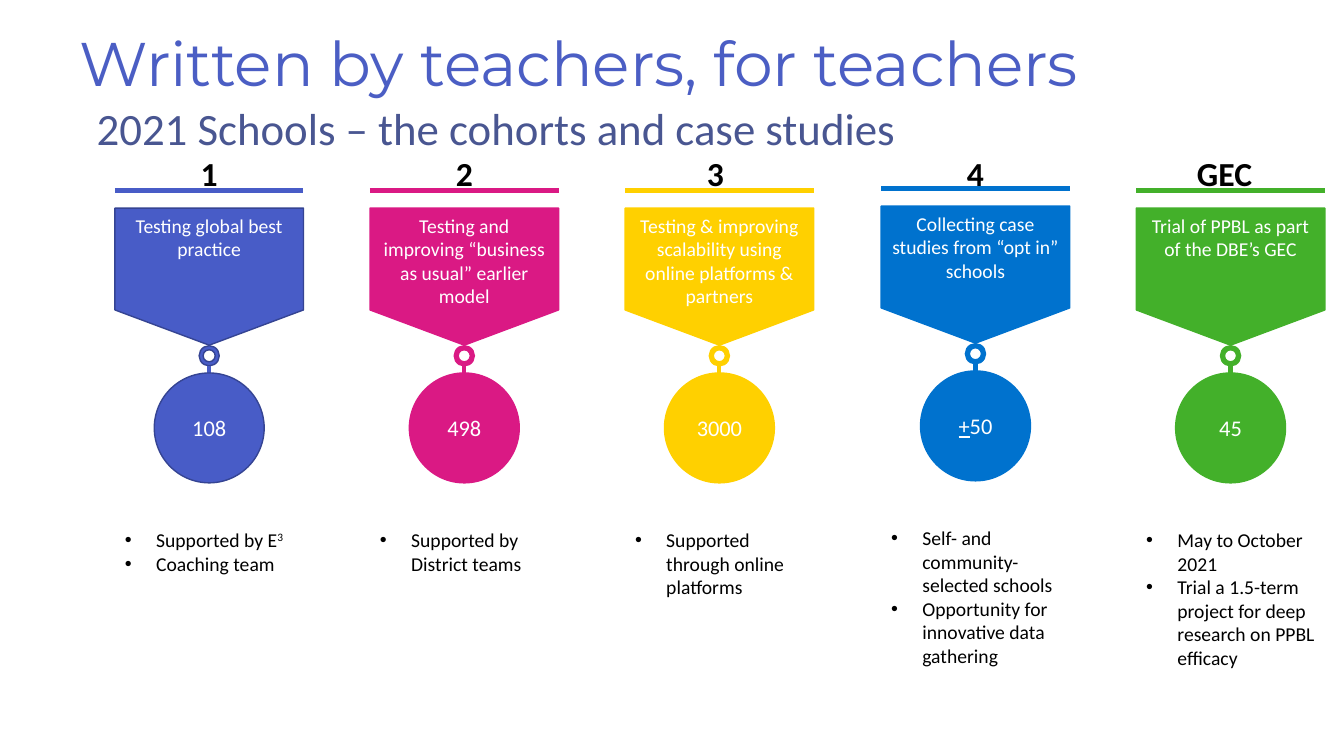
import dataclasses

import lxml.etree
import pptx
import pptx.dml.color
import pptx.enum.shapes
import pptx.enum.text
import pptx.oxml.ns
import pptx.util

RGBColor = pptx.dml.color.RGBColor
Shape = pptx.enum.shapes.MSO_SHAPE
Align = pptx.enum.text.PP_ALIGN
Anchor = pptx.enum.text.MSO_ANCHOR
AutoSize = pptx.enum.text.MSO_AUTO_SIZE

PX = 9144
WHITE = RGBColor(0xFF, 0xFF, 0xFF)
BLACK = RGBColor(0x00, 0x00, 0x00)
TITLE_BLUE = RGBColor(0x4B, 0x5E, 0xC4)
SUBTITLE_BLUE = RGBColor(0x49, 0x56, 0x91)
INDIGO = RGBColor(0x48, 0x5C, 0xC7)
DARK_INDIGO = RGBColor(0x35, 0x44, 0x93)
PINK = RGBColor(0xDA, 0x19, 0x84)
YELLOW = RGBColor(0xFF, 0xD0, 0x00)
BLUE = RGBColor(0x00, 0x72, 0xCE)
GREEN = RGBColor(0x43, 0xB0, 0x2A)

COLUMN_WIDTH = 187
FIRST_LEFT, LAST_LEFT = 114, 1127
COLUMN_TOP = 147


@dataclasses.dataclass
class Cohort:
    label: str
    heading: str
    heading_height: int
    schools: list
    details: list
    details_height: int
    color: RGBColor
    outline: RGBColor
    label_shift: int = 0
    lift: int = 0


COHORTS = [
    Cohort("1", "Testing global best practice", 57, ["108"],
           [["Supported by E", ("3", "superscript")], ["Coaching team"]], 57,
           INDIGO, DARK_INDIGO),
    Cohort("2", "Testing and improving “business as usual” earlier model", 128, ["498"],
           [["Supported by District teams"]], 57, PINK, PINK),
    Cohort("3", "Testing & improving scalability using online platforms & partners", 128,
           ["3000"], [["Supported through online platforms"]], 81, YELLOW, YELLOW,
           label_shift=-4),
    Cohort("4", "Collecting case studies from “opt in” schools", 81,
           [("+", "underline"), "50"],
           [["Self- and community-selected schools"],
            ["Opportunity for innovative data gathering"]], 199, BLUE, BLUE, lift=2),
    Cohort("GEC", "Trial of PPBL as part of the DBE’s GEC", 81, ["45"],
           [["May to October 2021"],
            ["Trial a 1.5-term project for deep research on PPBL efficacy"]], 175,
           GREEN, GREEN, label_shift=-6),
]


def px(*lengths):
    return [round(length * PX) for length in lengths]


def add_bullet(paragraph):
    properties = paragraph._p.get_or_add_pPr()
    properties.set("marL", str(31 * PX))
    properties.set("indent", str(-31 * PX))
    font = lxml.etree.SubElement(properties, pptx.oxml.ns.qn("a:buFont"))
    font.set("typeface", "Arial")
    bullet = lxml.etree.SubElement(properties, pptx.oxml.ns.qn("a:buChar"))
    bullet.set("char", "•")


def write_text(shape, paragraphs, size, color, font="Calibri", bold=False, align=Align.LEFT,
               anchor=Anchor.TOP, spacing=None, bullets=False):
    frame = shape.text_frame
    frame.word_wrap = True
    frame.auto_size = AutoSize.NONE
    frame.vertical_anchor = anchor
    for index, pieces in enumerate(paragraphs):
        paragraph = frame.paragraphs[0] if index == 0 else frame.add_paragraph()
        paragraph.alignment = align
        if spacing:
            paragraph.line_spacing = spacing
        if bullets:
            add_bullet(paragraph)
        for piece in pieces:
            text, style = (piece, None) if isinstance(piece, str) else piece
            run = paragraph.add_run()
            run.text = text
            run.font.name = font
            run.font.size = pptx.util.Pt(size)
            run.font.bold = bold
            run.font.color.rgb = color
            if style == "underline":
                run.font.underline = True
            if style == "superscript":
                run._r.get_or_add_rPr().set("baseline", "30000")


def add_filled(shapes, kind, box, cohort):
    shape = shapes.add_shape(kind, *px(*box))
    shape.shadow.inherit = False
    shape.fill.solid()
    shape.fill.fore_color.rgb = cohort.color
    shape.line.color.rgb = cohort.outline
    shape.line.width = pptx.util.Pt(1)
    return shape


def add_line(shapes, start, end, color):
    line = shapes.add_connector(pptx.enum.shapes.MSO_CONNECTOR.STRAIGHT, *px(*start, *end))
    line.line.color.rgb = color
    line.line.width = pptx.util.Pt(3)
    lxml.etree.SubElement(line._element.spPr, pptx.oxml.ns.qn("a:effectLst"))


def add_cohort(slide, cohort, left, top, width):
    shapes = slide.shapes.add_group_shape().shapes
    center = left + width / 2
    y = top - cohort.lift

    banner_depth = 136
    banner = add_filled(shapes, Shape.PENTAGON,
                        (center - banner_depth / 2, y + 34, banner_depth, width), cohort)
    banner.rotation = 90
    banner.adjustments[0] = 0.257
    add_line(shapes, (left, y + 42), (left + width, y + 42), cohort.color)
    ring = add_filled(shapes, Shape.DONUT, (center - 10, y + 196, 20, 20), cohort)
    ring.adjustments[0] = 0.2
    add_line(shapes, (center, y + 216), (center, y + 278), cohort.color)
    circle = add_filled(shapes, Shape.OVAL, (center - 54.5, y + 223, 109, 109), cohort)
    write_text(circle, [cohort.schools], 16, WHITE, align=Align.CENTER, anchor=Anchor.MIDDLE)

    heading = shapes.add_textbox(*px(left, y + 60, width, cohort.heading_height))
    write_text(heading, [[cohort.heading]], 14, WHITE, align=Align.CENTER)
    details = shapes.add_textbox(*px(left, y + 372, width, cohort.details_height))
    write_text(details, cohort.details, 14, BLACK, bullets=True)
    label_width = 114 if len(cohort.label) > 1 else 51
    label_left = center + cohort.label_shift - label_width / 2
    label = shapes.add_textbox(*px(label_left, top, label_width, 50))
    write_text(label, [[cohort.label]], 24, BLACK, bold=True, align=Align.CENTER)


def add_header(slide, left, top, width):
    title = slide.shapes.title
    title.left, title.top, title.width, title.height = px(left, top, width, 123)
    write_text(title, [["Written by teachers, for teachers"]], 44, TITLE_BLUE,
               font="Montserrat", anchor=Anchor.MIDDLE, spacing=0.9)
    subtitle = slide.shapes.add_textbox(*px(left + 17, top + 96, 1228, 75))
    write_text(subtitle, [["2021 Schools – the cohorts and case studies"]], 32,
               SUBTITLE_BLUE, spacing=0.9)


def main():
    presentation = pptx.Presentation()
    presentation.slide_width, presentation.slide_height = px(1333, 750)
    slide = presentation.slides.add_slide(presentation.slide_layouts[5])
    add_header(slide, 69, 5, 1089)
    step = (LAST_LEFT - FIRST_LEFT) / (len(COHORTS) - 1)
    for index, cohort in enumerate(COHORTS):
        add_cohort(slide, cohort, round(FIRST_LEFT + index * step), COLUMN_TOP, COLUMN_WIDTH)
    presentation.save("out.pptx")


if __name__ == "__main__":
    main()
